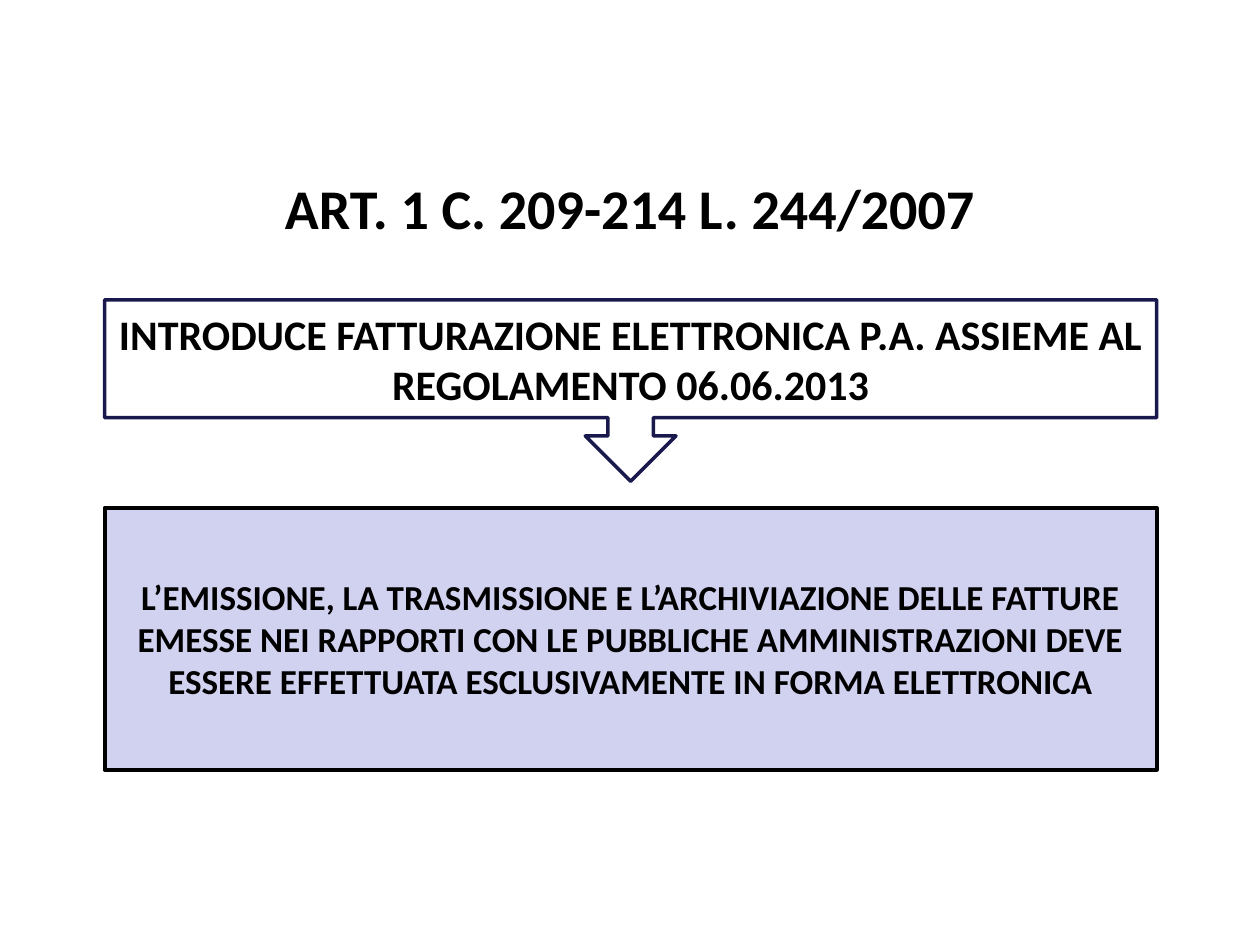
from dataclasses import dataclass

from pptx import Presentation
from pptx.dml.color import RGBColor
from pptx.enum.shapes import MSO_SHAPE as Shape
from pptx.enum.text import MSO_ANCHOR as Anchor, PP_ALIGN as Align
from pptx.util import Inches, Pt


@dataclass(frozen=True)
class Theme:
    font: str = "Calibri"
    ink: str = "000000"
    paper: str = "FFFFFF"
    navy: str = "19194D"
    lavender: str = "D1D1F0"
    title_size: int = 32
    law_size: int = 24
    rule_size: int = 20


class SlideBuilder:
    """Places elements in inches on a 10 x 7.5 slide."""

    def __init__(self, deck, theme):
        self.theme = theme
        self.slide = deck.slides.add_slide(deck.slide_layouts[5])

    def place(self, element, left, top, width, height):
        element.left, element.top = Inches(left), Inches(top)
        element.width, element.height = Inches(width), Inches(height)

    def set_text(self, element, text, size):
        frame = element.text_frame
        frame.word_wrap = True
        frame.vertical_anchor = Anchor.MIDDLE
        paragraph = frame.paragraphs[0]
        paragraph.alignment = Align.CENTER
        run = paragraph.add_run()
        run.text = text
        run.font.name = self.theme.font
        run.font.size = Pt(size)
        run.font.bold = True
        run.font.color.rgb = RGBColor.from_string(self.theme.ink)

    def title(self, text, *box):
        heading = self.slide.shapes.title
        self.place(heading, *box)
        self.set_text(heading, text, self.theme.title_size)

    def panel(self, kind, text, size, fill, line, weight, *box):
        panel = self.slide.shapes.add_shape(kind, *map(Inches, box))
        panel.shadow.inherit = False
        panel.fill.solid()
        panel.fill.fore_color.rgb = RGBColor.from_string(fill)
        panel.line.color.rgb = RGBColor.from_string(line)
        panel.line.width = Pt(weight)
        self.set_text(panel, text, size)


def main():
    deck = Presentation()
    deck.slide_width, deck.slide_height = Inches(10), Inches(7.5)
    theme = Theme()
    builder = SlideBuilder(deck, theme)
    margin, column = 0.83, 8.35

    # Law reference
    builder.title("ART. 1 C. 209-214 L. 244/2007", 0, 1.34, 10, 0.6)

    # What the law introduces, pointing down to its consequence
    builder.panel(
        Shape.DOWN_ARROW_CALLOUT,
        "INTRODUCE FATTURAZIONE ELETTRONICA P.A. ASSIEME AL REGOLAMENTO 06.06.2013",
        theme.law_size, theme.paper, theme.navy, 2,
        margin, 2.38, column, 1.44)

    # Resulting obligation
    builder.panel(
        Shape.RECTANGLE,
        "L’EMISSIONE, LA TRASMISSIONE E L’ARCHIVIAZIONE DELLE FATTURE EMESSE "
        "NEI RAPPORTI CON LE PUBBLICHE AMMINISTRAZIONI DEVE ESSERE EFFETTUATA "
        "ESCLUSIVAMENTE IN FORMA ELETTRONICA",
        theme.rule_size, theme.lavender, theme.ink, 2.25,
        margin, 4.03, column, 2.08)

    deck.save("out.pptx")


if __name__ == "__main__":
    main()
